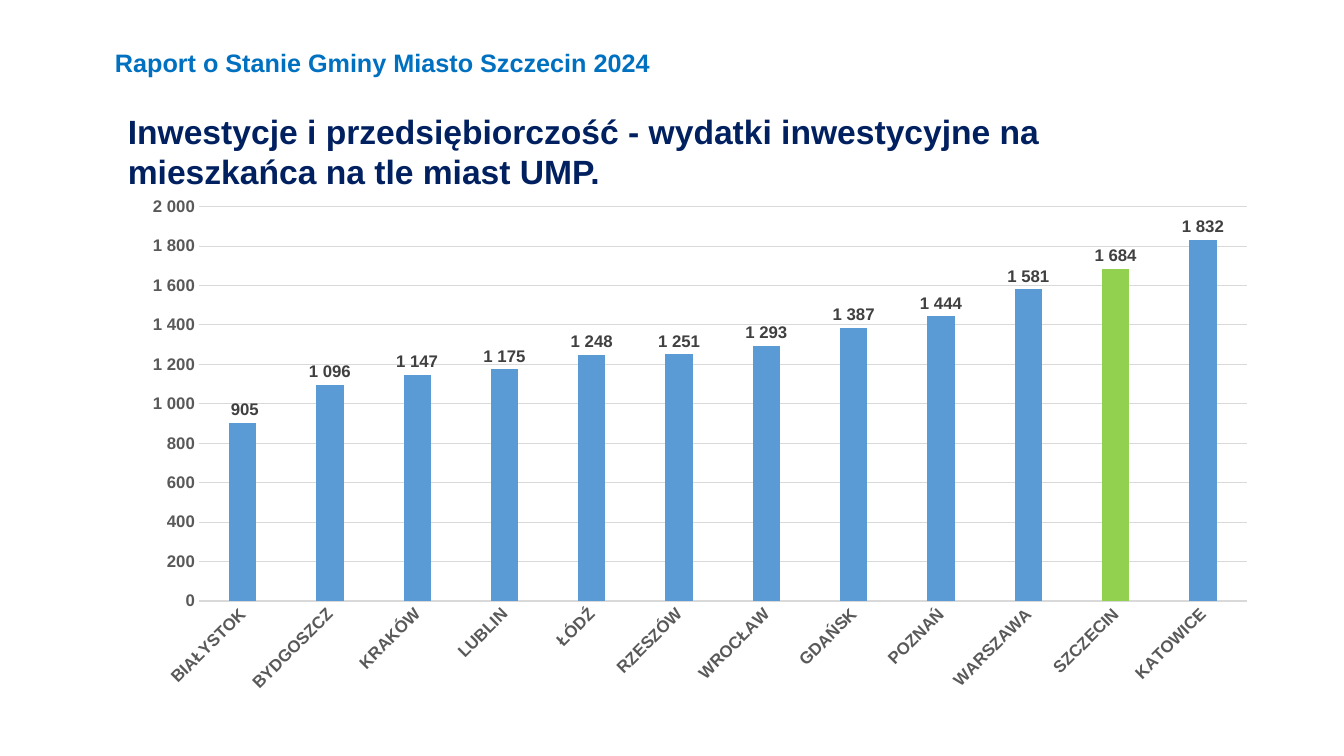
"""Build the slide on investment spending per resident in UMP cities."""
from pptx import Presentation
from pptx.chart.data import CategoryChartData
from pptx.dml.color import RGBColor
from pptx.enum import chart as ch, text
from pptx.util import Inches, Pt

REPORT = "Raport o Stanie Gminy Miasto Szczecin 2024"
HEADING = ("Inwestycje i przedsiębiorczość - wydatki inwestycyjne na "
           "mieszkańca na tle miast UMP.")
SPENDING = {
    "BIAŁYSTOK": 905, "BYDGOSZCZ": 1096, "KRAKÓW": 1147, "LUBLIN": 1175,
    "ŁÓDŹ": 1248, "RZESZÓW": 1251, "WROCŁAW": 1293, "GDAŃSK": 1387,
    "POZNAŃ": 1444, "WARSZAWA": 1581, "SZCZECIN": 1684, "KATOWICE": 1832,
}
HIGHLIGHT = "SZCZECIN"
NUMBER = r"[$-415]#\ ##0"
BLUE, GREEN, GRID, AXIS_TEXT = "5B9BD5", "92D050", "D9D9D9", "595959"


def rgb(value):
    return RGBColor.from_string(value)


def box(*lengths):
    return [Inches(n) for n in lengths]


def set_font(font, size, color):
    font.name, font.size, font.bold = "Arial", Pt(size), True
    font.color.rgb = rgb(color)


def set_line(line, color):
    line.color.rgb = rgb(color)
    line.width = Pt(0.75)


def write(sp, content, size, color, anchor=text.MSO_ANCHOR.TOP, after=0, spacing=1):
    tf = sp.text_frame
    tf.word_wrap = True
    tf.auto_size = text.MSO_AUTO_SIZE.NONE
    tf.vertical_anchor = anchor
    p = tf.paragraphs[0]
    p.alignment = text.PP_ALIGN.LEFT
    p.space_after, p.line_spacing = Pt(after), spacing
    r = p.add_run()
    r.text = content
    set_font(r.font, size, color)


def add_spending_chart(s):
    data = CategoryChartData(number_format=NUMBER)
    data.categories = list(SPENDING)
    data.add_series("Series 1", list(SPENDING.values()))
    chart = s.shapes.add_chart(ch.XL_CHART_TYPE.COLUMN_CLUSTERED,
                               *box(1.29, 1.86, 11.3, 5.11), data).chart
    chart.has_legend = chart.has_title = False
    chart.font.name, chart.font.size = "Calibri", Pt(10)

    cat, val = chart.category_axis, chart.value_axis
    for axis in (cat, val):
        axis.major_tick_mark = axis.minor_tick_mark = ch.XL_TICK_MARK.NONE
        set_font(axis.tick_labels.font, 12, AXIS_TEXT)
    set_line(cat.format.line, GRID)
    cat._element.txPr.bodyPr.set("rot", "-2700000")
    val.minimum_scale, val.maximum_scale, val.major_unit = 0, 2000, 200
    val.format.line.fill.background()
    set_line(val.major_gridlines.format.line, GRID)
    val.tick_labels.number_format = NUMBER
    val.tick_labels.number_format_is_linked = False

    plot = chart.plots[0]
    plot.gap_width, plot.overlap, plot.vary_by_categories = 219, -27, False
    series = plot.series[0]
    point = series.points[list(SPENDING).index(HIGHLIGHT)]
    for part, color in ((series, BLUE), (point, GREEN)):
        part.format.fill.solid()
        part.format.fill.fore_color.rgb = rgb(color)
    labels = series.data_labels
    labels.show_value = True
    labels.position = ch.XL_LABEL_POSITION.OUTSIDE_END
    labels.number_format, labels.number_format_is_linked = NUMBER, False
    set_font(labels.font, 12, "404040")


def main():
    prs = Presentation()
    prs.slide_width, prs.slide_height = box(13.33, 7.5)
    s = prs.slides.add_slide(prs.slide_layouts[5])
    title = s.shapes.title
    title.left, title.top, title.width, title.height = box(1.04, 0.31, 7.34, 0.66)
    write(title, REPORT, 18, "0070C0", anchor=text.MSO_ANCHOR.MIDDLE, spacing=0.9)
    heading = s.shapes.add_textbox(*box(1.17, 1.05, 10.67, 0.91))
    write(heading, HEADING, 24, "002060", after=6)
    add_spending_chart(s)
    prs.save("out.pptx")


if __name__ == "__main__":
    main()
